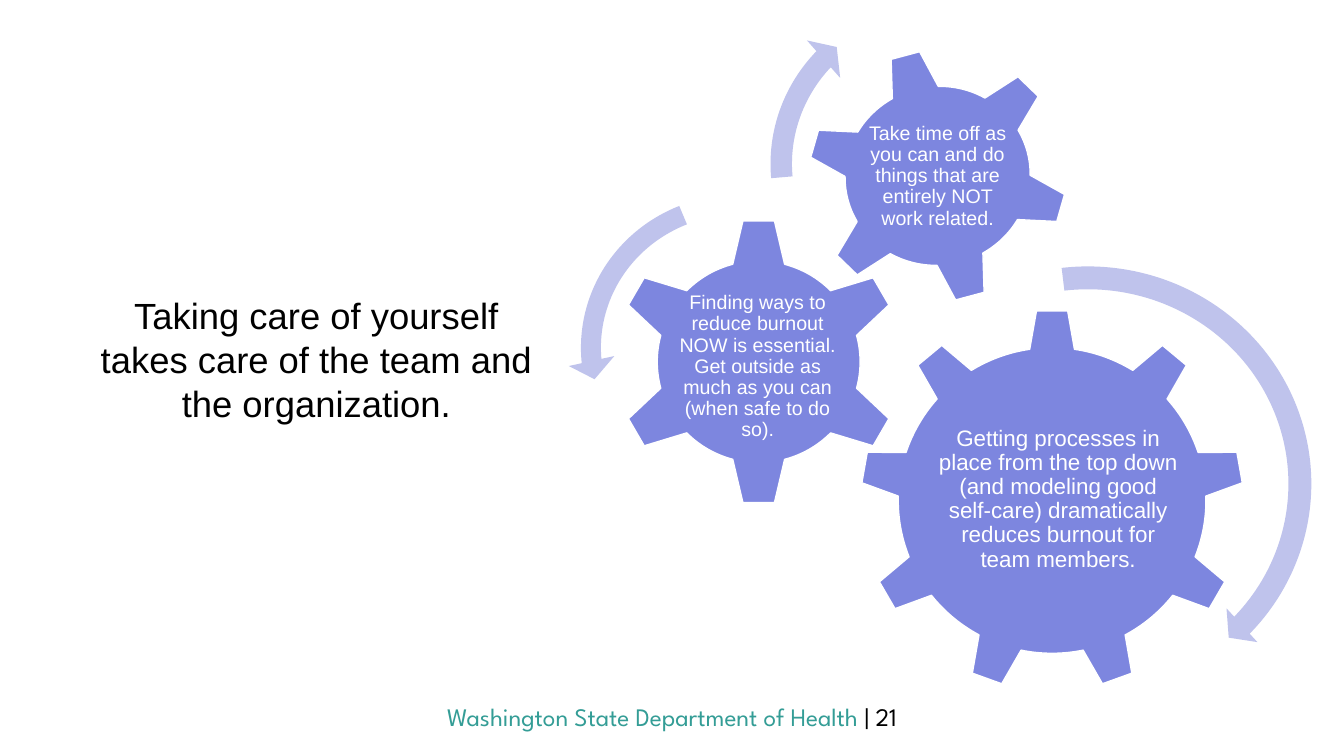
from pptx import Presentation
from pptx.dml.color import RGBColor
from pptx.enum.shapes import MSO_SHAPE
from pptx.enum.text import MSO_ANCHOR, MSO_AUTO_SIZE, PP_ALIGN
from pptx.util import Inches, Pt

BLUE, PALE, TEAL = "7D86DF", "BFC3EC", "349D96"
WHITE, BLACK = "FFFFFF", "000000"

GEARS = [
    (MSO_SHAPE.GEAR_9, (8.53, 3.07, 3.81, 3.79), 0, (9.29, 3.89, 2.41, 2.13), 16,
     "Getting processes in place from the top down (and modeling good "
     "self-care) dramatically reduces burnout for team members."),
    (MSO_SHAPE.GEAR_6, (6.09, 2.16, 2.87, 2.86), 0, (6.63, 3.01, 1.77, 1.26), 14,
     "Finding ways to reduce burnout NOW is essential. Get outside as much "
     "as you can (when safe to do so)."),
    (MSO_SHAPE.GEAR_6, (8, 0.48, 2.6, 2.53), -15, (8.57, 1.04, 1.46, 1.42), 14,
     "Take time off as you can and do things that are entirely NOT work related."),
]

ARROWS = [
    (MSO_SHAPE.CIRCULAR_ARROW, (8.46, 2.53, 4.66, 4.54),
     (0.05, 2.99, 25.53, 157.85, 0.05)),
    (MSO_SHAPE.LEFT_CIRCULAR_ARROW, (5.63, 1.8, 3.39, 3.3),
     (0.06, 4.3, 104.89, 148.38, 0.07)),
    (MSO_SHAPE.CIRCULAR_ARROW, (7.5, -0.15, 3.65, 3.55),
     (0.06, 3.94, 133.14, 105.08, 0.07)),
]


def color(code):
    """Turn a hex string into a colour."""
    return RGBColor.from_string(code)


def box(place):
    """Turn left, top, width and height into lengths."""
    return [Inches(n) for n in place]


def write(frame, runs, size, font="Arial"):
    """Write coloured runs as one centred, wrapped paragraph."""
    frame.word_wrap = True
    frame.auto_size = MSO_AUTO_SIZE.NONE
    para = frame.paragraphs[0]
    para.alignment = PP_ALIGN.CENTER
    for text, code in runs:
        run = para.add_run()
        run.text = text
        run.font.size = Pt(size)
        run.font.name = font
        run.font.color.rgb = color(code)
    return para


def add_shape(slide, kind, place, fill):
    """Add a filled preset shape without shadow or outline."""
    shape = slide.shapes.add_shape(kind, *box(place))
    shape.shadow.inherit = False
    shape.fill.solid()
    shape.fill.fore_color.rgb = color(fill)
    shape.line.fill.background()
    return shape


def add_gear(slide, kind, place, turn, inner, size, text):
    """Add a gear and its upright caption."""
    gear = add_shape(slide, kind, place, BLUE)
    gear.rotation = turn
    gear.line.color.rgb = color(WHITE)
    gear.line.width = Pt(1)
    frame = slide.shapes.add_textbox(*box(inner)).text_frame
    frame.margin_left = frame.margin_right = Inches(0.02)
    frame.margin_top = frame.margin_bottom = Inches(0.02)
    frame.vertical_anchor = MSO_ANCHOR.MIDDLE
    write(frame, [(text, WHITE)], size).line_spacing = 0.9


def add_arrow(slide, kind, place, bends):
    """Add a curved arrow with its bend values."""
    arrow = add_shape(slide, kind, place, PALE)
    for i, bend in enumerate(bends):
        arrow.adjustments[i] = bend


def add_title(slide, place, text):
    """Place and format the title."""
    title = slide.shapes.title
    title.left, title.top, title.width, title.height = box(place)
    title.text_frame.vertical_anchor = MSO_ANCHOR.TOP
    write(title.text_frame, [(text, BLACK)], 26)


def add_foot(slide, place, runs):
    """Add the footer line."""
    frame = slide.shapes.add_textbox(*box(place)).text_frame
    write(frame, runs, 18, "League Spartan")


def main():
    """Build and save the slide."""
    deck = Presentation()
    deck.slide_width, deck.slide_height = Inches(13.33), Inches(7.5)
    slide = deck.slides.add_slide(deck.slide_layouts[5])
    add_title(slide, (0.77, 2.86, 4.74, 1.41),
              "Taking care of yourself takes care of the team and the organization.")
    add_foot(slide, (0, 6.91, 13.33, 0.4),
             [("Washington State Department of Health ", TEAL), ("| 21", BLACK)])
    for gear in GEARS:
        add_gear(slide, *gear)
    for arrow in ARROWS:
        add_arrow(slide, *arrow)
    deck.save("out.pptx")


if __name__ == "__main__":
    main()
